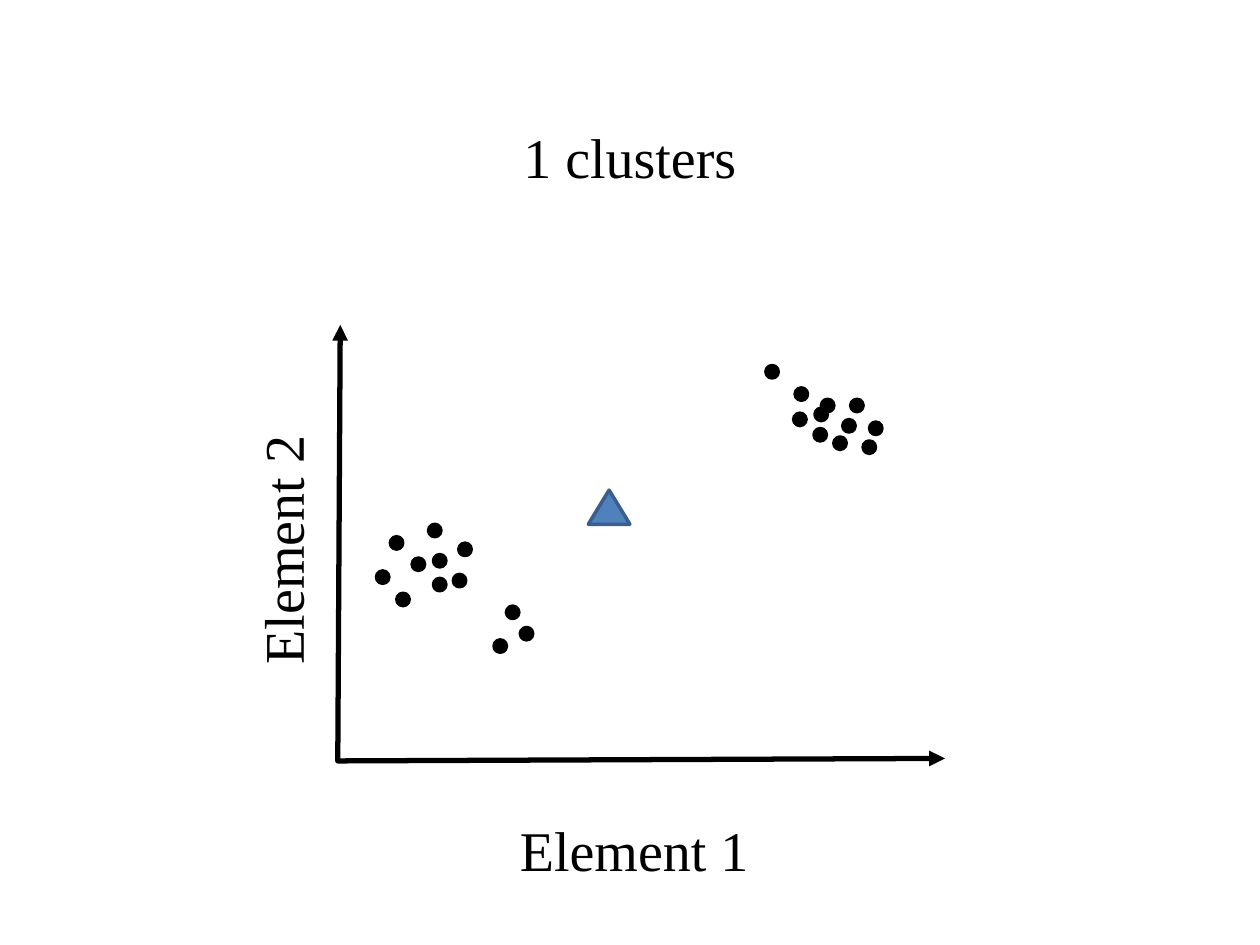
from dataclasses import dataclass

from lxml import etree
from pptx import Presentation
from pptx.dml.color import RGBColor
from pptx.enum.shapes import MSO_SHAPE
from pptx.enum.text import MSO_AUTO_SIZE, PP_ALIGN
from pptx.oxml.ns import qn
from pptx.shapes.autoshape import Shape
from pptx.slide import Slide
from pptx.util import Cm, Pt

ELLIPSE = MSO_SHAPE.OVAL
TRIANGLE = MSO_SHAPE.ISOSCELES_TRIANGLE
CENTER = PP_ALIGN.CENTER
GROW = MSO_AUTO_SIZE.SHAPE_TO_FIT_TEXT


@dataclass(frozen=True)
class Theme:
    ink: str = "000000"
    centroid_fill: str = "4F81BD"
    centroid_line: str = "3A5F8C"
    font: str = "Times New Roman"
    text_size: float = 32
    marker_line: float = 2
    axis_line: float = 3


@dataclass(frozen=True)
class Label:
    text: str
    left: float
    top: float
    width: float
    rotation: float = 0


@dataclass(frozen=True)
class Marker:
    left: float
    top: float
    width: float
    height: float
    kind: MSO_SHAPE
    fill: str
    line: str


THEME = Theme()
LABEL_HEIGHT = 1.63
DOT_SIZE = 0.25
AXIS_LENGTH = 12.24
AXIS_POINTS = [(6.86, 6.55), (6.81, 15.34), (19.05, 15.29)]

LABELS = [
    Label("1 clusters", 0, 2.34, 25.4),
    Label("Element 1 ", 6.81, 16.31, AXIS_LENGTH),
    Label("Element 2 ", -0.43, 10.13, AXIS_LENGTH, 270),
]

LOWER_CLUSTER = [
    (7.87, 10.82), (8.31, 11.25), (8.74, 11.66), (9.25, 10.95),
    (8.0, 11.96), (7.59, 11.51), (8.64, 10.57), (8.74, 11.18),
    (9.14, 11.58), (10.21, 12.22), (9.96, 12.9), (10.49, 12.65),
]
UPPER_CLUSTER = [
    (16.56, 8.05), (16.99, 8.46), (17.15, 8.05), (16.0, 8.33),
    (17.4, 8.89), (17.53, 8.51), (16.41, 8.64), (16.03, 7.82),
    (16.43, 8.23), (16.81, 8.81), (15.44, 7.37),
]
CENTROID = Marker(11.86, 9.88, 0.84, 0.69, TRIANGLE,
                  THEME.centroid_fill, THEME.centroid_line)


def set_line(shape: Shape, color: str, width: float) -> None:
    shape.shadow.inherit = False
    shape.line.color.rgb = RGBColor.from_string(color)
    shape.line.width = Pt(width)


def add_label(page: Slide, label: Label) -> None:
    box = page.shapes.add_textbox(Cm(label.left), Cm(label.top),
                                  Cm(label.width), Cm(LABEL_HEIGHT))
    box.rotation = label.rotation
    box.text_frame.word_wrap = True
    box.text_frame.auto_size = GROW
    para = box.text_frame.paragraphs[0]
    para.alignment = CENTER
    span = para.add_run()
    span.text = label.text
    span.font.name = THEME.font
    span.font.size = Pt(THEME.text_size)
    span.font.color.rgb = RGBColor.from_string(THEME.ink)


def add_marker(page: Slide, marker: Marker) -> None:
    shape = page.shapes.add_shape(marker.kind, Cm(marker.left), Cm(marker.top),
                                  Cm(marker.width), Cm(marker.height))
    shape.fill.solid()
    shape.fill.fore_color.rgb = RGBColor.from_string(marker.fill)
    set_line(shape, marker.line, THEME.marker_line)


def add_axes(page: Slide) -> None:
    start, *rest = [(Cm(x), Cm(y)) for x, y in AXIS_POINTS]
    builder = page.shapes.build_freeform(*start)
    builder.add_line_segments(rest, close=False)
    axes = builder.convert_to_shape()
    axes.fill.background()
    set_line(axes, THEME.ink, THEME.axis_line)
    outline = axes.line._get_or_add_ln()
    for end in ("a:headEnd", "a:tailEnd"):
        etree.SubElement(outline, qn(end), type="triangle")


def main() -> None:
    deck = Presentation()
    deck.slide_width, deck.slide_height = Cm(25.4), Cm(19.05)
    page = deck.slides.add_slide(deck.slide_layouts[6])
    add_axes(page)
    for left, top in LOWER_CLUSTER + UPPER_CLUSTER:
        add_marker(page, Marker(left, top, DOT_SIZE, DOT_SIZE, ELLIPSE,
                                THEME.ink, THEME.ink))
    add_marker(page, CENTROID)
    for label in LABELS:
        add_label(page, label)
    deck.save("out.pptx")


if __name__ == "__main__":
    main()
